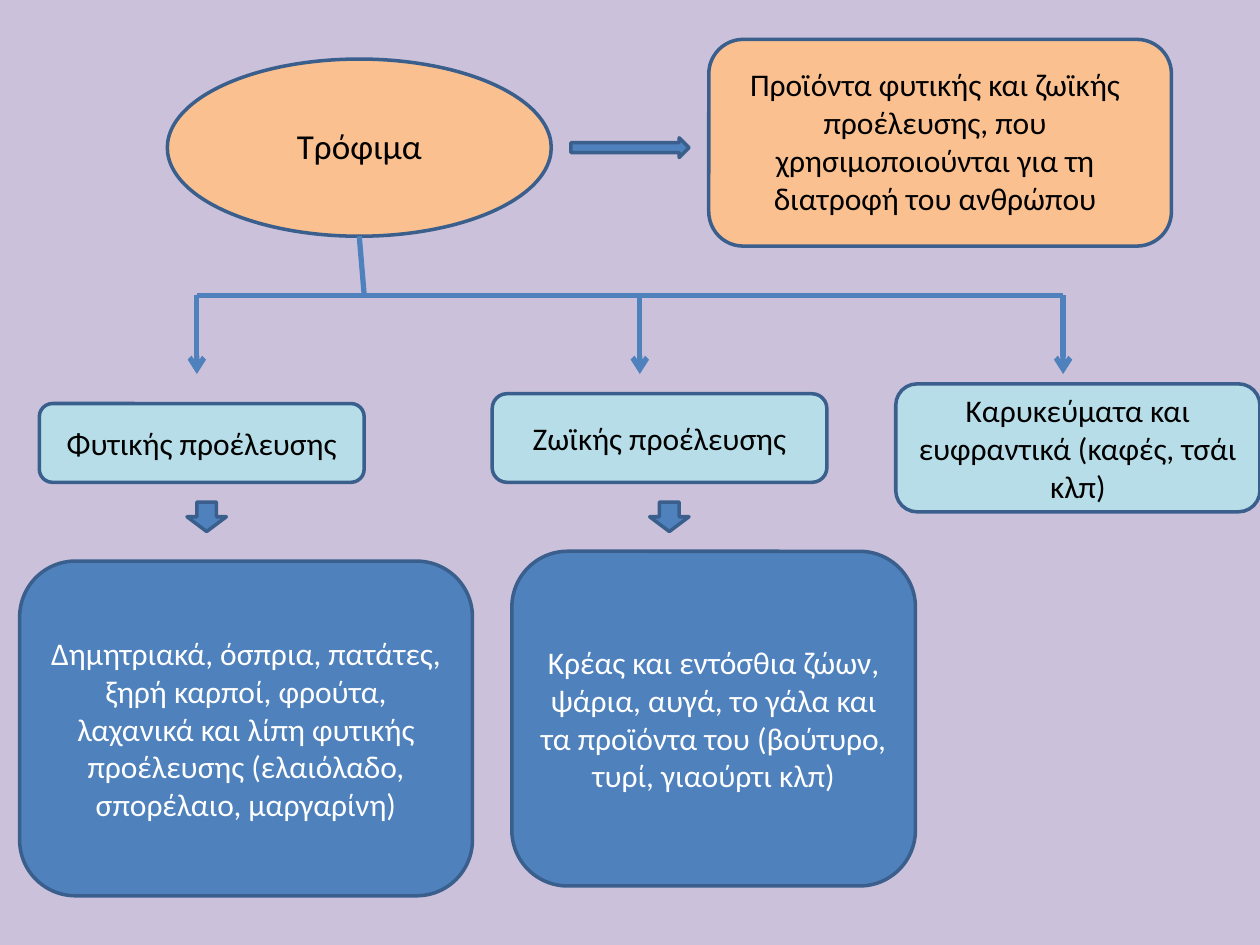
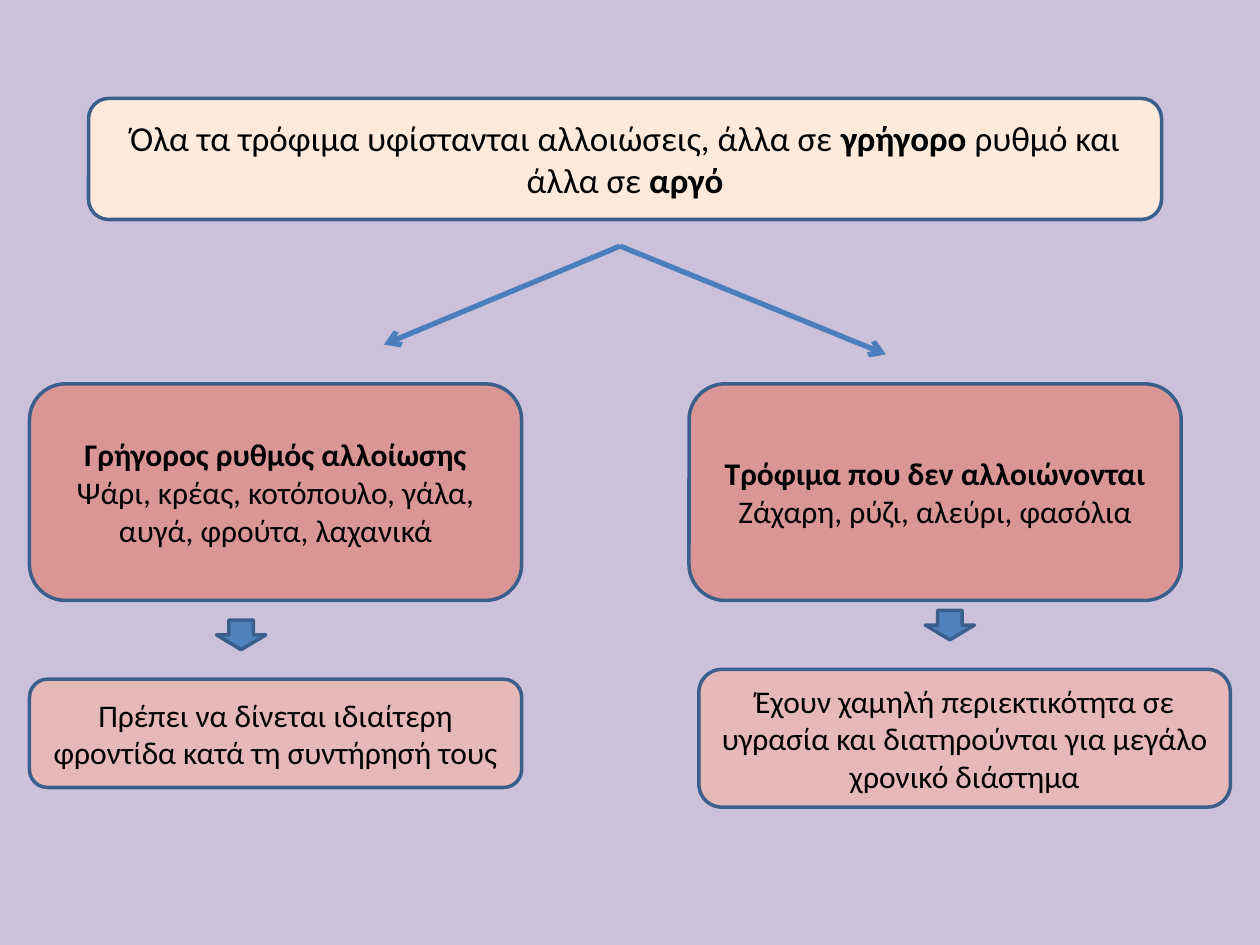
from lxml.etree import SubElement
from pptx import Presentation
from pptx.dml.color import RGBColor
from pptx.enum.shapes import MSO_CONNECTOR, MSO_SHAPE
from pptx.enum.text import MSO_ANCHOR, PP_ALIGN
from pptx.oxml.ns import qn
from pptx.util import Inches, Pt

# Shared look: a grid of 128 columns by 96 rows of square cells
WIDE, HIGH = 10, 7.5
COLS = 128
CELL = Inches(WIDE) / COLS
COLOR = {
    "back": "CCC1DA", "edge": "3A5F8C", "blue": "4F81BD", "fork": "4B7EBC",
    "peach": "FAC090", "cream": "FDEADA", "aqua": "B7DEE8",
    "rose": "D99694", "pink": "E6B9B8", "black": "000000", "white": "FFFFFF",
}
FONT = {"name": "Calibri", "size": Pt(18)}
LARGE = {"size": Pt(20)}
FRAME = {"word_wrap": True, "vertical_anchor": MSO_ANCHOR.MIDDLE}
TOP = {"vertical_anchor": MSO_ANCHOR.TOP}
ROUND, OVAL = MSO_SHAPE.ROUNDED_RECTANGLE, MSO_SHAPE.OVAL
RIGHT, DOWN = MSO_SHAPE.RIGHT_ARROW, MSO_SHAPE.DOWN_ARROW


def rgb(name):
    return RGBColor.from_string(COLOR[name])


def cells(*nums):
    return [round(n * CELL) for n in nums]


def inside(box, part):
    """Move a part (left, top, width, height) to the corner of its box."""
    return box[0] + part[0], box[1] + part[1], *part[2:]


def style(item, *formats):
    for fmt in formats:
        for key, value in fmt.items():
            setattr(item, key, value)


def write(shape, text, ink="black", font={}, frame={}):
    """Fill a shape with centred text; *stars* mark bold words."""
    body = shape.text_frame
    style(body, FRAME, frame)
    for i, line in enumerate(text.split("\n")):
        para = body.add_paragraph() if i else body.paragraphs[0]
        para.alignment = PP_ALIGN.CENTER
        for j, part in enumerate(line.split("*")):
            if part:
                run = para.add_run()
                run.text = part
                style(run.font, FONT, font, {"bold": j % 2 == 1})
                run.font.color.rgb = rgb(ink)


def block(slide, kind, box, fill="blue"):
    shape = slide.shapes.add_shape(kind, *cells(*box))
    shape.shadow.inherit = False
    shape.fill.solid()
    shape.fill.fore_color.rgb = rgb(fill)
    shape.line.color.rgb = rgb("edge")
    shape.line.width = Pt(2)
    return shape


def label(slide, box, text, font={}):
    write(slide.shapes.add_textbox(*cells(*box)), text, font=font, frame=TOP)


def link(slide, start, end, color="blue", arrow=True):
    wire = slide.shapes.add_connector(
        MSO_CONNECTOR.STRAIGHT, *cells(*start, *end))
    wire.line.color.rgb = rgb(color)
    wire.line.width = Pt(3)
    props = wire.element.spPr
    if arrow:
        SubElement(props.find(qn("a:ln")), qn("a:tailEnd"), type="arrow")
    SubElement(props, qn("a:effectLst"))


def concept(slide, box):
    """Term, arrow and definition across the top."""
    block(slide, OVAL, inside(box, (0, 2, 39, 18)), "peach")
    label(slide, inside(box, (7, 8, 25, 5.6)), "Τρόφιμα", LARGE)
    block(slide, RIGHT, inside(box, (41, 10, 12, 2)))
    block(slide, ROUND, inside(box, (55, 0, 47, 21)), "peach")
    label(slide, inside(box, (57, 2, 42, 16.8)),
          "Προϊόντα φυτικής και ζωϊκής προέλευσης, που χρησιμοποιούνται "
          "για τη διατροφή του ανθρώπου")


def branch(slide, box):
    """Stem, crossbar and three drops."""
    left, top, wide, high = box
    bar, end = top + 6, top + high
    link(slide, (left, bar), (left + wide, bar), arrow=False)
    for drop in (0, 45, wide):
        link(slide, (left + drop, bar), (left + drop, end))
    link(slide, (left + 16.5, top), (left + 17, bar), arrow=False)


def fork(slide, box):
    """Two arrows from one point to the lower corners."""
    left, top, wide, high = box
    peak = left + 24, top
    link(slide, peak, (left, top + high - 1), "fork")
    link(slide, peak, (left + wide, top + high), "fork")


def stack(slide, box, head, arrow, note, look):
    """Heading box, with an arrow and a note box placed from its corner."""
    top, low, ink = look
    write(block(slide, ROUND, box, top), head)
    block(slide, DOWN, inside(box, arrow))
    spot, text = note
    write(block(slide, ROUND, inside(box, spot), low), text, ink)


def kinds(slide):
    """Slide of food groups by origin."""
    look = "aqua", "blue", "white"
    concept(slide, (17, 4, 102, 21))
    stack(slide, (4, 41, 33, 8), "Φυτικής προέλευσης", (15, 10, 4, 3),
          ((-2, 16, 46, 34),
           "Δημητριακά, όσπρια, πατάτες, ξηρή καρποί, φρούτα, λαχανικά και "
           "λίπη φυτικής προέλευσης (ελαιόλαδο, σπορέλαιο, μαργαρίνη)"), look)
    stack(slide, (50, 40, 34, 9), "Ζωϊκής προέλευσης", (16, 11, 4, 3),
          ((2, 16, 41, 34),
           "Κρέας και εντόσθια ζώων, ψάρια, αυγά, το γάλα και τα προϊόντα "
           "του (βούτυρο, τυρί, γιαούρτι κλπ)"), look)
    write(block(slide, ROUND, (91, 39, 37, 13), "aqua"),
          "Καρυκεύματα και ευφραντικά (καφές, τσάι κλπ)")
    branch(slide, (20, 24, 88, 14))


def decay(slide):
    """Slide of fast and slow spoilage."""
    look = "rose", "pink", "black"
    write(block(slide, ROUND, (9, 10, 109, 12.3), "cream"),
          "Όλα τα τρόφιμα υφίστανται αλλοιώσεις, άλλα σε *γρήγορο* ρυθμό "
          "και άλλα σε *αργό*", font=LARGE)
    fork(slide, (39, 25, 51, 11))
    stack(slide, (3, 39, 50, 22),
          "*Γρήγορος ρυθμός αλλοίωσης*\n"
          "Ψάρι, κρέας, κοτόπουλο, γάλα, αυγά, φρούτα, λαχανικά",
          (19, 24, 5, 3),
          ((0, 30, 50, 11),
           "Πρέπει να δίνεται ιδιαίτερη φροντίδα κατά τη συντήρησή τους"),
          look)
    stack(slide, (70, 39, 50, 22),
          "*Τρόφιμα που δεν αλλοιώνονται*\nΖάχαρη, ρύζι, αλεύρι, φασόλια",
          (24, 23, 5, 3),
          ((1, 29, 54, 14),
           "Έχουν χαμηλή περιεκτικότητα σε υγρασία και διατηρούνται για "
           "μεγάλο χρονικό διάστημα"), look)


def main():
    deck = Presentation()
    style(deck, {"slide_width": Inches(WIDE), "slide_height": Inches(HIGH)})
    for build in (kinds, decay):
        slide = deck.slides.add_slide(deck.slide_layouts[6])
        slide.background.fill.solid()
        slide.background.fill.fore_color.rgb = rgb("back")
        build(slide)
    deck.save("out.pptx")


if __name__ == "__main__":
    main()
